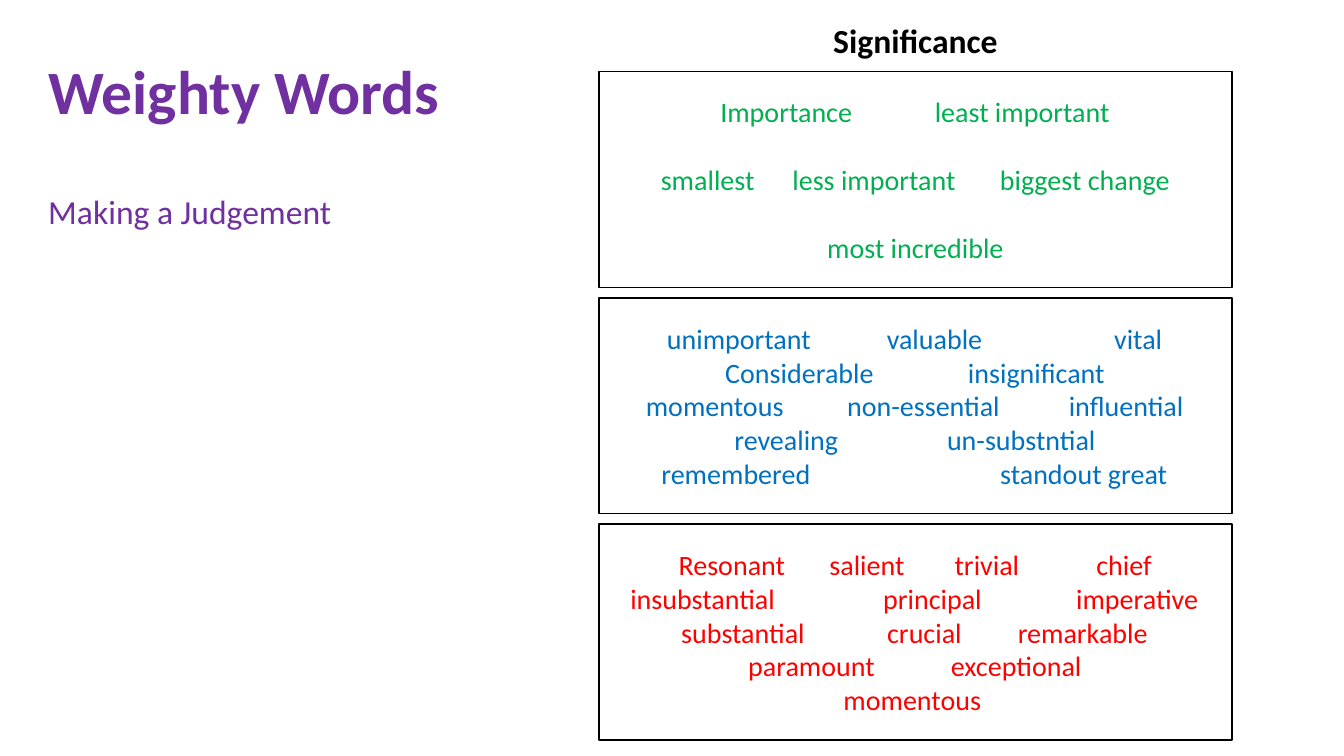
from lxml.etree import SubElement
from pptx import Presentation
from pptx.dml.color import RGBColor
from pptx.enum.shapes import MSO_SHAPE as Preset
from pptx.enum.text import MSO_ANCHOR as Anchor, PP_ALIGN as Align
from pptx.oxml.ns import qn
from pptx.util import Inches, Pt


def color(value):
    return RGBColor.from_string(value)


def add_run(paragraph, text, size, value, bold=False):
    run = paragraph.add_run()
    run.text = text
    run.font.name = "Calibri"
    run.font.size = Pt(size)
    run.font.bold = bold
    run.font.color.rgb = color(value)


presentation = Presentation()
presentation.slide_width = Inches(13.33)
presentation.slide_height = Inches(7.5)
slide = presentation.slides.add_slide(presentation.slide_layouts[6])

# Title and subtitle
title = slide.shapes.add_textbox(Inches(0.38), Inches(0.21), Inches(4.99), Inches(3.17))
frame = title.text_frame
frame.word_wrap = True
frame.margin_top = Inches(0.4)
heading = frame.paragraphs[0]
add_run(heading, "Weighty Words", 44, "7030A0", bold=True)
subtitle = frame.add_paragraph()
subtitle.space_before = Pt(48)
add_run(subtitle, "Making a Judgement", 24, "7030A0")
for paragraph in frame.paragraphs:
    paragraph.line_spacing = 0.9

# Heading above the boxes
label = slide.shapes.add_textbox(Inches(7.58), Inches(0.15), Inches(3), Inches(0.5))
label.text_frame.word_wrap = True
paragraph = label.text_frame.paragraphs[0]
paragraph.alignment = Align.CENTER
add_run(paragraph, "Significance", 24, "000000", bold=True)

# Word boxes: colour, extra space between rows, rows of (word, centre in inches)
LEFT, TOP, WIDTH, HEIGHT, PITCH = 5.94, 0.71, 6.28, 2.14, 2.245
word_boxes = [
    ("00B050", 24.4, [
        [("Importance", 1.76), ("least important", 4.1)],
        [("smallest", 0.98), ("less important", 2.63), ("biggest change", 4.72)],
        [("most incredible", 3.04)],
    ]),
    ("0070C0", 0, [
        [("unimportant", 1.29), ("valuable", 3.23), ("vital", 5.25)],
        [("Considerable", 1.89), ("insignificant", 4.24)],
        [("momentous", 1.05), ("non-essential", 3.12), ("influential", 5.13)],
        [("revealing", 1.76), ("un-substntial", 4.09)],
        [("remembered", 1.26), ("standout great", 4.71)],
    ]),
    ("FF0000", 0, [
        [("Resonant", 1.22), ("salient", 2.56), ("trivial", 3.75), ("chief", 5.11)],
        [("insubstantial", 0.93), ("principal", 3.21), ("imperative", 5.24)],
        [("substantial", 1.33), ("crucial", 3.13), ("remarkable", 4.7)],
        [("paramount", 2.01), ("exceptional", 4.04)],
        [("momentous", 3.01)],
    ]),
]
for index, (text_color, gap, rows) in enumerate(word_boxes):
    box = slide.shapes.add_shape(Preset.RECTANGLE, Inches(LEFT), Inches(TOP + index * PITCH),
                                 Inches(WIDTH), Inches(HEIGHT))
    box.shadow.inherit = False
    box.fill.solid()
    box.fill.fore_color.rgb = color("FFFFFF")
    box.line.color.rgb = color("000000")
    box.line.width = Pt(1)
    frame = box.text_frame
    frame.word_wrap = True
    frame.vertical_anchor = Anchor.MIDDLE
    for number, row in enumerate(rows):
        paragraph = frame.add_paragraph() if number else frame.paragraphs[0]
        paragraph.alignment = Align.LEFT
        paragraph.space_before = Pt(gap if number else 0)
        # Each word is centred on its own tab stop
        tabs = SubElement(paragraph._p.get_or_add_pPr(), qn("a:tabLst"))
        for word, center in row:
            SubElement(tabs, qn("a:tab"), pos=str(Inches(center)), algn="ctr")
            add_run(paragraph, "\t" + word, 20, text_color)

presentation.save("out.pptx")
